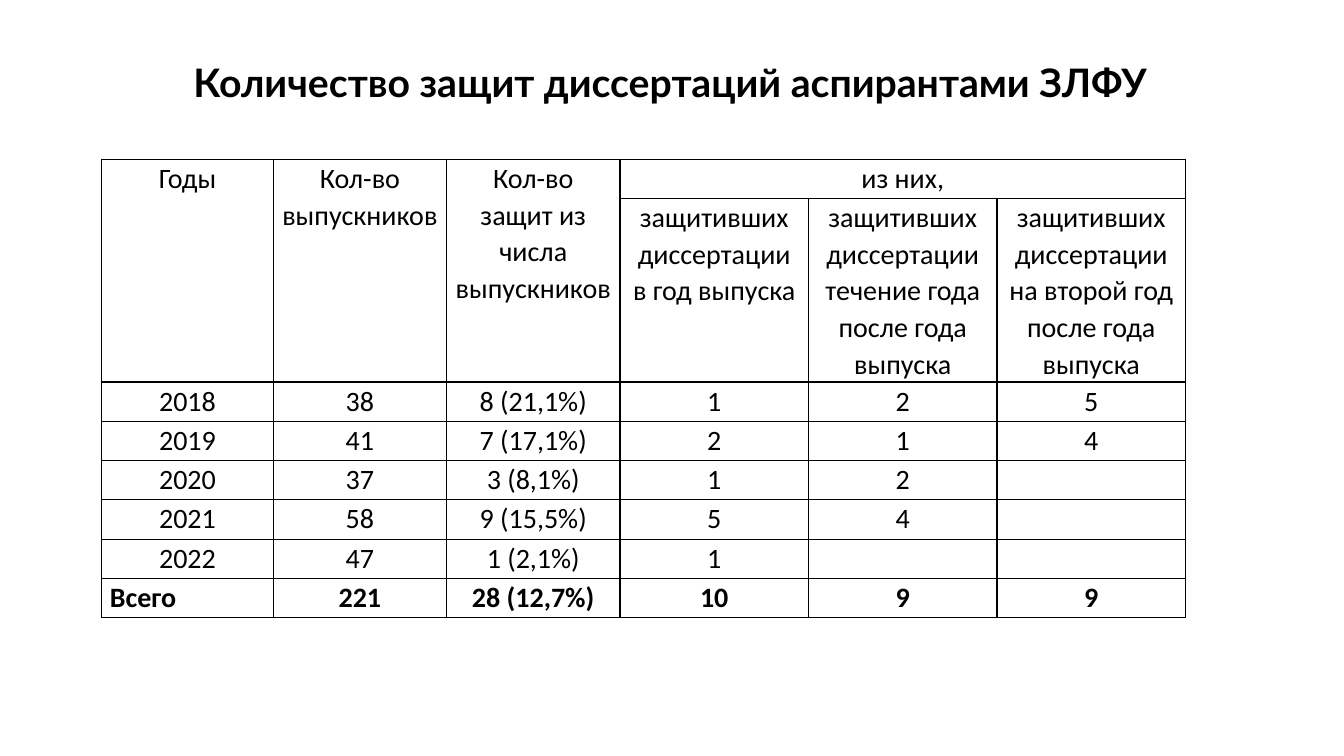
from dataclasses import dataclass

from lxml import etree
from pptx import Presentation
from pptx.dml.color import RGBColor
from pptx.enum.text import MSO_ANCHOR, PP_ALIGN
from pptx.oxml.ns import qn
from pptx.util import Pt

PX = 9144
LEFT, CENTER = PP_ALIGN.LEFT, PP_ALIGN.CENTER
MIDDLE = MSO_ANCHOR.MIDDLE


@dataclass(frozen=True)
class Theme:
    """Colours, fonts and type sizes of the slide."""
    ink: str = "000000"
    title_font: str = "Lato"
    body_font: str = "Calibri"
    title_size: int = 28
    body_size: int = 20
    border: int = 1


THEME = Theme()
TITLE = "Количество защит диссертаций аспирантами ЗЛФУ"
COLUMNS = [170, 172, 172, 187, 187, 187]
ROWS = [39, 182] + [39] * 6
MERGES = [((0, 0), (1, 0)), ((0, 1), (1, 1)), ((0, 2), (1, 2)), ((0, 3), (0, 5))]
DEFENCES = [
    ["Годы", "Кол-во выпускников", "Кол-во защит из числа выпускников", "из них,", "", ""],
    ["", "", "", "защитивших диссертации в год выпуска",
     "защитивших диссертации течение года после года выпуска",
     "защитивших диссертации на второй год после года выпуска"],
    ["2018", "38", "8 (21,1%)", "1", "2", "5"],
    ["2019", "41", "7 (17,1%)", "2", "1", "4"],
    ["2020", "37", "3 (8,1%)", "1", "2", ""],
    ["2021", "58", "9 (15,5%)", "5", "4", ""],
    ["2022", "47", "1 (2,1%)", "1", "", ""],
    ["Всего", "221", "28 (12,7%)", "10", "9", "9"],
]


def write(frame, text, font, size, bold, align, spacing):
    """Write one styled run into the first paragraph of a text frame."""
    para = frame.paragraphs[0]
    para.alignment, para.line_spacing = align, spacing
    para.font.size = Pt(size)
    if text:
        span = para.add_run()
        span.text = text
        span.font.name, span.font.size, span.font.bold = font, Pt(size), bold
        span.font.color.rgb = RGBColor.from_string(THEME.ink)


def outline(cell):
    """Draw a thin solid line on every side of a table cell."""
    properties = cell._tc.get_or_add_tcPr()
    for side in ("a:lnL", "a:lnR", "a:lnT", "a:lnB"):
        line = etree.SubElement(properties, qn(side), w=str(Pt(THEME.border)))
        fill = etree.SubElement(line, qn("a:solidFill"))
        etree.SubElement(fill, qn("a:srgbClr"), val=THEME.ink)


def add_title(page, box):
    """Place the heading in the given box."""
    frame = page.shapes.add_textbox(*(n * PX for n in box)).text_frame
    frame.word_wrap = True
    frame.vertical_anchor = MIDDLE
    write(frame, TITLE, THEME.title_font, THEME.title_size, True, LEFT, 0.9)


def add_defence_table(page, left, top):
    """Place the table of defences with its corner at the given point."""
    table = page.shapes.add_table(
        len(ROWS), len(COLUMNS), left * PX, top * PX,
        sum(COLUMNS) * PX, sum(ROWS) * PX).table
    table.first_row = table.horz_banding = False
    for column, width in zip(table.columns, COLUMNS):
        column.width = width * PX
    for row, height in zip(table.rows, ROWS):
        row.height = height * PX
    for r, texts in enumerate(DEFENCES):
        total = r == len(DEFENCES) - 1
        for c, text in enumerate(texts):
            cell = table.cell(r, c)
            cell.margin_left = cell.margin_right = 8 * PX
            cell.margin_top = cell.margin_bottom = 0
            outline(cell)
            cell.fill.background()
            align = LEFT if total and c == 0 else CENTER
            write(cell.text_frame, text, THEME.body_font, THEME.body_size,
                  total, align, 1.07)
    for first, last in MERGES:
        table.cell(*first).merge(table.cell(*last))


def main():
    """Build the deck and save it."""
    deck = Presentation()
    deck.slide_width, deck.slide_height = 1333 * PX, 750 * PX
    page = deck.slides.add_slide(deck.slide_layouts[6])
    add_title(page, (182, 53, 1107, 63))
    add_defence_table(page, 101, 158)
    deck.save("out.pptx")


if __name__ == "__main__":
    main()
